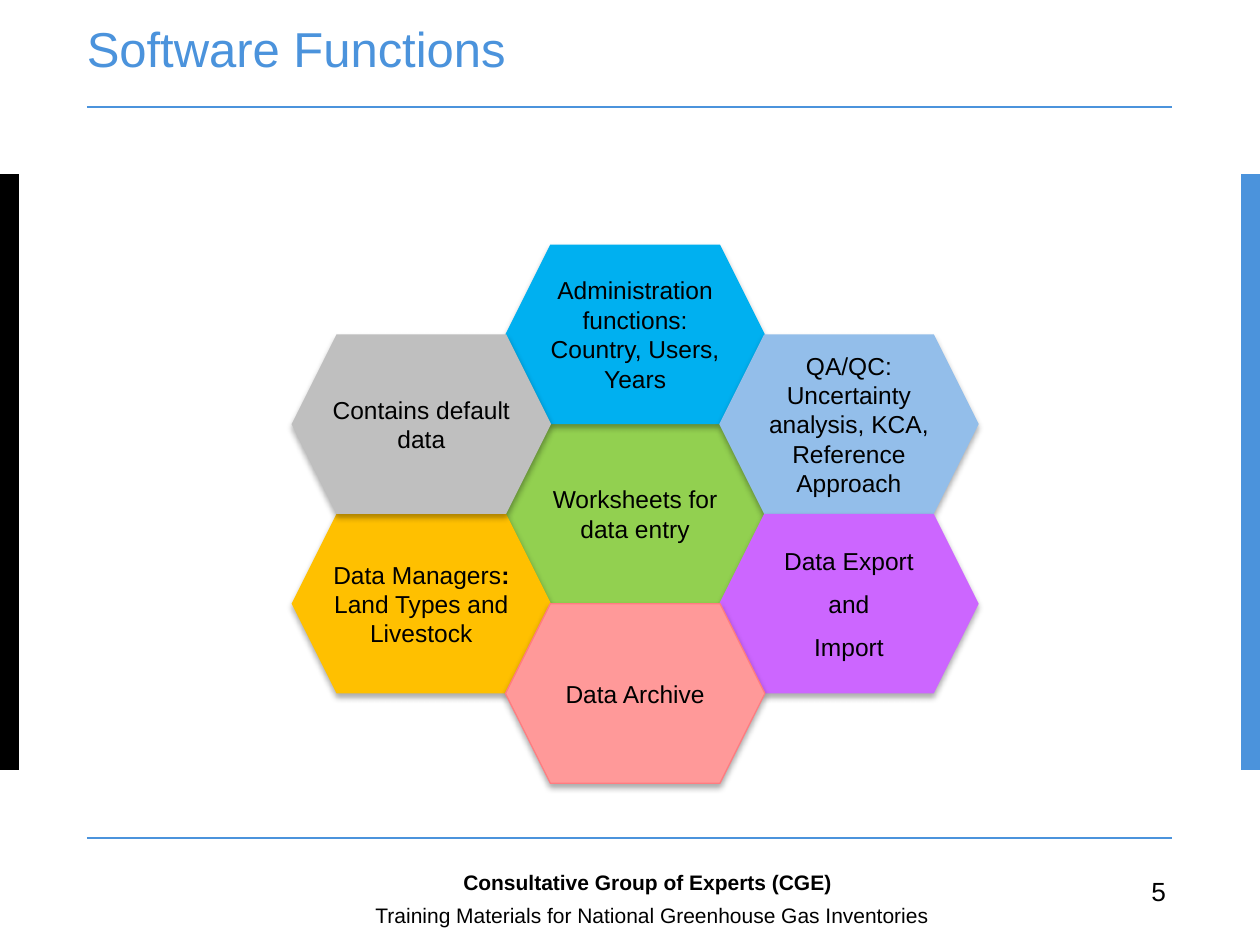
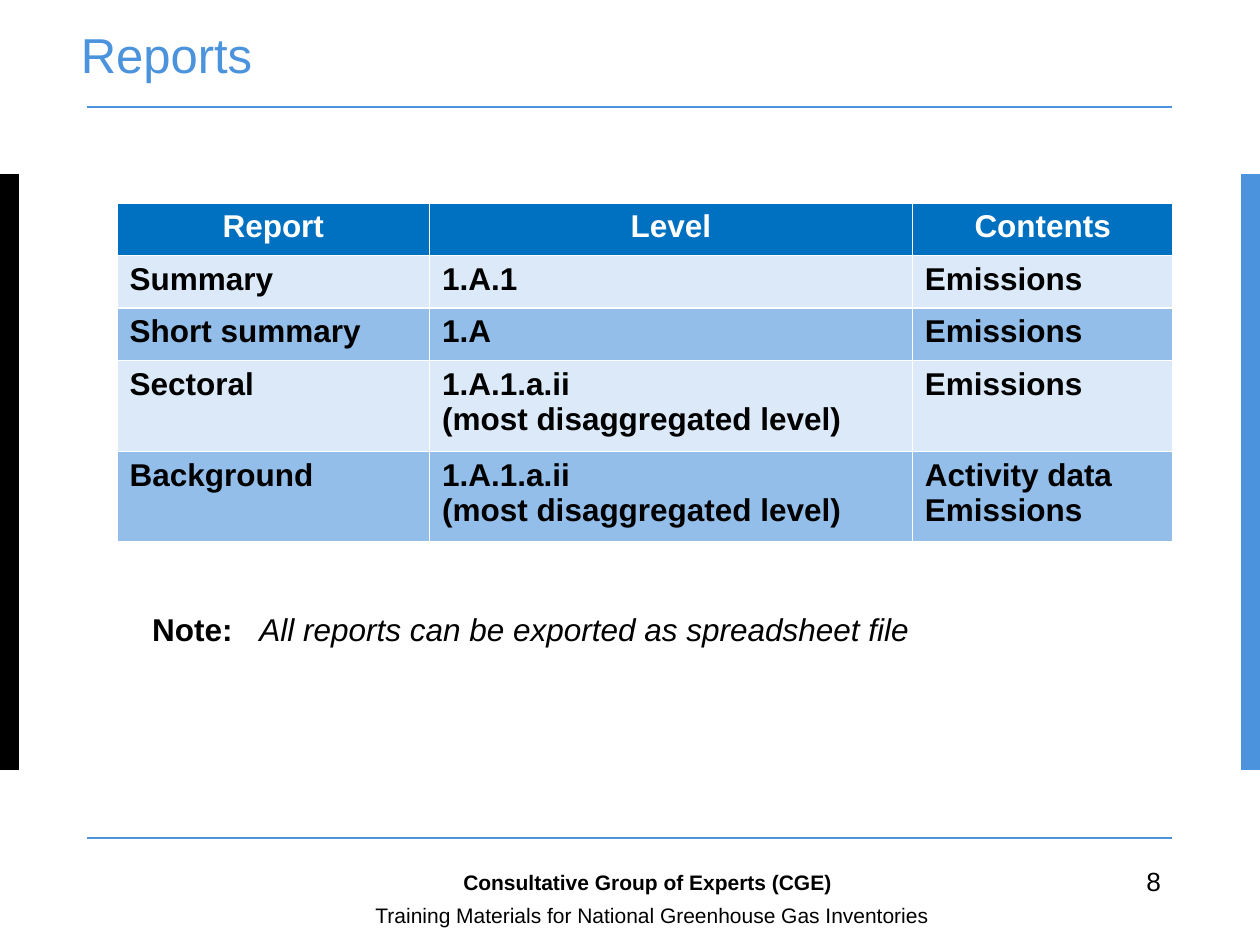
import dataclasses

import pptx
import pptx.dml.color
import pptx.enum.shapes
import pptx.enum.text
import pptx.oxml
import pptx.oxml.ns
import pptx.util
from pptx.util import Cm

SHAPES = pptx.enum.shapes.MSO_SHAPE
ALIGN = pptx.enum.text.PP_ALIGN
ANCHOR = pptx.enum.text.MSO_ANCHOR
qn = pptx.oxml.ns.qn


@dataclasses.dataclass(frozen=True)
class Theme:
    font: str = "Arial"
    black: str = "000000"
    white: str = "FFFFFF"
    accent: str = "4B93DC"
    header: str = "0070C0"
    light_row: str = "DBE9F8"
    dark_row: str = "93BEEA"
    title_size: int = 28
    body_size: int = 18
    number_size: int = 15
    cell_size: int = 14
    footer_size: int = 12


THEME = Theme()


def rgb(value):
    return pptx.dml.color.RGBColor.from_string(value)


def sub(parent, tag, **attributes):
    """Append a drawing element with the given attributes."""
    child = pptx.oxml.parse_xml(f"<a:{tag} {pptx.oxml.ns.nsdecls('a')}/>")
    for key, value in attributes.items():
        child.set(key, str(value))
    parent.append(child)
    return child


def write(frame, text, size=THEME.body_size, color=THEME.black, bold=False,
          align=ALIGN.LEFT, anchor=ANCHOR.TOP, inset=None, gap=0, leading=None, tab=None):
    """Fill a frame; each line is a string or a list of (text, bold, italic) runs."""
    frame.word_wrap = True
    frame.vertical_anchor = anchor
    if inset is not None:
        frame.margin_left = frame.margin_right = inset
        frame.margin_top = frame.margin_bottom = inset
    lines = [text] if isinstance(text, str) else text
    for index, line in enumerate(lines):
        paragraph = frame.add_paragraph() if index else frame.paragraphs[0]
        if tab is not None:
            stops = sub(paragraph._p.get_or_add_pPr(), "tabLst")
            sub(stops, "tab", pos=tab, algn="l")
        paragraph.alignment = align
        if index and gap:
            paragraph.space_before = pptx.util.Pt(gap)
        if leading:
            paragraph.line_spacing = pptx.util.Pt(leading)
        runs = [(line, bold, False)] if isinstance(line, str) else line
        for words, is_bold, is_italic in runs:
            run = paragraph.add_run()
            run.text = words
            run.font.name = THEME.font
            run.font.size = pptx.util.Pt(size)
            run.font.bold = is_bold
            run.font.italic = is_italic
            run.font.color.rgb = rgb(color)


class Deck:
    def __init__(self):
        self.presentation = pptx.Presentation()
        self.presentation.slide_width = Cm(25.4)
        self.presentation.slide_height = Cm(19.05)
        self.slide = None

    def add_slide(self):
        """Start a slide with the side bands, rules and footer."""
        self.slide = self.presentation.slides.add_slide(self.presentation.slide_layouts[6])
        for left, color in ((0, THEME.black), (25.02, THEME.accent)):
            self.shape(SHAPES.RECTANGLE, left, 3.51, 0.38, 12.01, color)
        for top in (2.16, 16.89):
            self.rule(1.75, top, 23.62)
        self.text(7.32, 18.06, 14.53, 0.51,
                  "Training Materials for National Greenhouse Gas Inventories",
                  size=THEME.footer_size)
        self.text(9.09, 17.4, 8.61, 0.69, "Consultative Group of Experts (CGE)",
                  size=THEME.footer_size, bold=True)

    def shape(self, preset, left, top, width, height, fill, outline=None):
        shape = self.slide.shapes.add_shape(preset, Cm(left), Cm(top), Cm(width), Cm(height))
        shape.shadow.inherit = False
        shape.fill.solid()
        shape.fill.fore_color.rgb = rgb(fill)
        if outline:
            shape.line.color.rgb = rgb(outline)
            shape.line.width = pptx.util.Pt(0.75)
        else:
            shape.line.fill.background()
        return shape

    def rule(self, left, top, right):
        line = self.slide.shapes.add_connector(
            pptx.enum.shapes.MSO_CONNECTOR.STRAIGHT, Cm(left), Cm(top), Cm(right), Cm(top))
        line.line.color.rgb = rgb(THEME.accent)
        line.line.width = pptx.util.Pt(1)
        sub(line._element.spPr, "effectLst")

    def text(self, left, top, width, height, text, **style):
        box = self.slide.shapes.add_textbox(Cm(left), Cm(top), Cm(width), Cm(height))
        write(box.text_frame, text, **style)

    def title(self, left, top, width, height, text):
        self.text(left, top, width, height, text, size=THEME.title_size,
                  color=THEME.accent, anchor=ANCHOR.MIDDLE, inset=0, leading=15)

    def page_number(self, left, top, number):
        self.text(left, top, 0.79, 0.89, number, size=THEME.number_size)

    def hexagon(self, left, top, width, height, text, fill, outline=None):
        cell = self.shape(SHAPES.HEXAGON, left, top, width, height, fill, outline)
        shadow = sub(cell._element.spPr.find(qn("a:effectLst")), "outerShdw",
                     blurRad=pptx.util.Pt(3.5), dist=pptx.util.Pt(2.2),
                     dir=5400000, rotWithShape=0)
        sub(sub(shadow, "srgbClr", val=THEME.black), "alpha", val=32000)
        write(cell.text_frame, text, size=THEME.cell_size, align=ALIGN.CENTER,
              anchor=ANCHOR.MIDDLE, inset=0, gap=8)

    def table(self, left, top, widths, heights, rows):
        table = self.slide.shapes.add_table(
            len(rows), len(widths), Cm(left), Cm(top),
            Cm(sum(widths)), Cm(sum(heights))).table
        table.horz_banding = False
        for column, width in zip(table.columns, widths):
            column.width = Cm(width)
        for index, (row, height, texts) in enumerate(zip(table.rows, heights, rows)):
            row.height = Cm(height)
            is_header = index == 0
            band = THEME.light_row if index % 2 else THEME.dark_row
            for cell, text in zip(row.cells, texts):
                self.borders(cell)
                cell.fill.solid()
                cell.fill.fore_color.rgb = rgb(THEME.header if is_header else band)
                write(cell.text_frame, text, bold=True,
                      color=THEME.white if is_header else THEME.black,
                      align=ALIGN.CENTER if is_header else ALIGN.LEFT)

    def borders(self, cell):
        properties = cell._tc.get_or_add_tcPr()
        for side in ("lnL", "lnR", "lnT", "lnB"):
            edge = sub(properties, side, w=pptx.util.Pt(1))
            sub(sub(edge, "solidFill"), "srgbClr", val=THEME.white)


def software_functions(deck):
    deck.add_slide()
    deck.title(1.75, 0.86, 21.87, 0.86, "Software Functions")

    # Honeycomb: column, half-row, text, fill, outline
    left, top, column_step, half_row = 5.88, 4.93, 4.31, 1.81
    functions = [
        (1, 2, "Worksheets for data entry", "92D050", None),
        (0, 3, [[("Data Managers", False, False), (": ", True, False),
                 ("Land Types and Livestock", False, False)]], "FFC000", None),
        (1, 0, "Administration functions: Country, Users, Years", "00B0F0", None),
        (2, 1, "QA/QC: Uncertainty analysis, KCA, Reference Approach", THEME.dark_row, None),
        (2, 3, ["Data Export", "and", "Import"], "CC66FF", None),
        (1, 4, "Data Archive", "FF9999", "FF7C80"),
        (0, 1, "Contains default data", "BFBFBF", None),
    ]
    for column, row, text, fill, outline in functions:
        deck.hexagon(left + column * column_step, top + row * half_row,
                     5.23, 2 * half_row, text, fill, outline)
    deck.page_number(22.96, 17.53, "5")


def reports(deck):
    deck.add_slide()
    deck.title(1.63, 0.15, 22.02, 2.54, "Reports")

    # Export note
    deck.text(3.07, 12.22, 21.21, 2.06,
              [[("Note:\t", True, False),
                ("All reports can be exported as spreadsheet file", False, True)]],
              inset=0, leading=24, tab=Cm(2.16))

    # Report levels
    finest_level = ["1.A.1.a.ii", "(most disaggregated level)"]
    deck.table(2.36, 4.09, (6.3, 9.73, 5.26), (1.06, 1.06, 1.06, 1.83, 1.83), [
        ("Report", "Level", "Contents"),
        ("Summary", "1.A.1", "Emissions"),
        ("Short summary", "1.A", "Emissions"),
        ("Sectoral", finest_level, "Emissions"),
        ("Background", finest_level, "Activity data Emissions"),
    ])
    deck.page_number(22.86, 17.32, "8")


def main():
    deck = Deck()
    software_functions(deck)
    reports(deck)
    deck.presentation.save("out.pptx")


if __name__ == "__main__":
    main()
